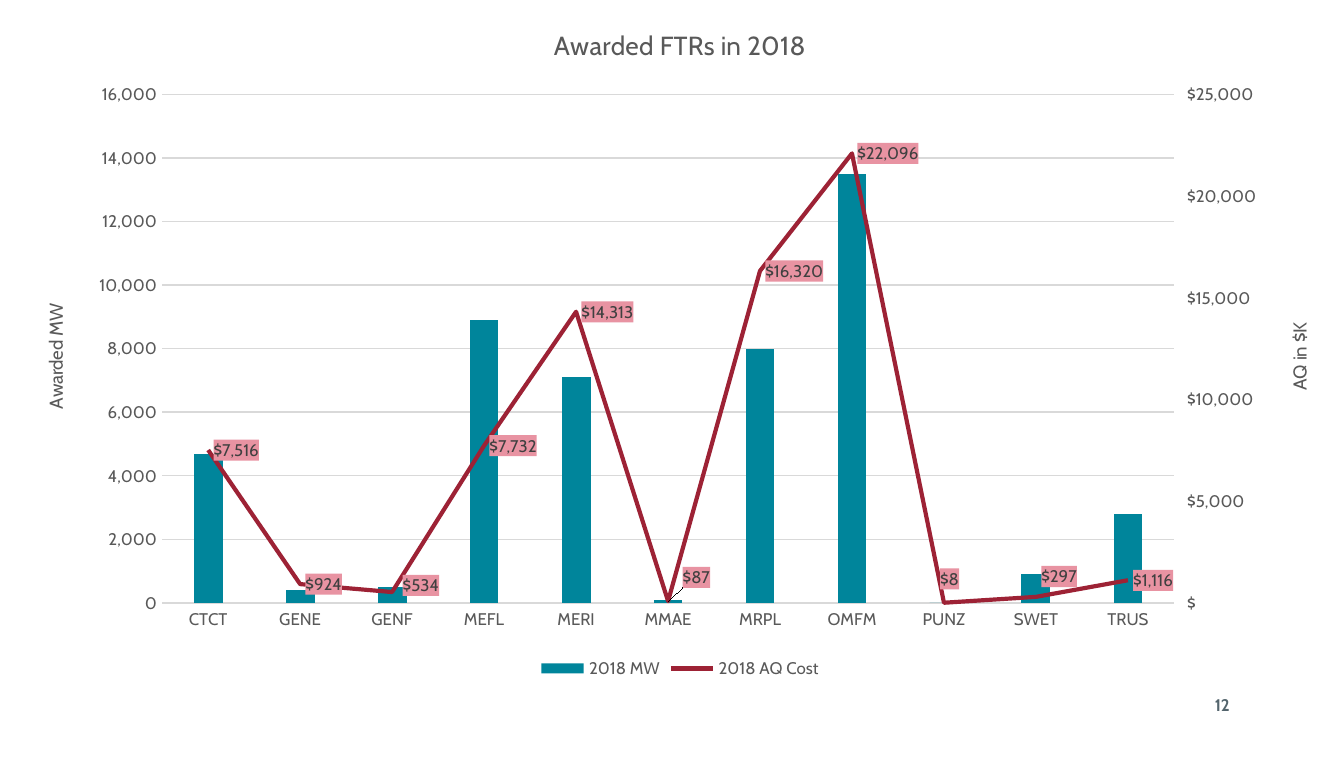
from copy import deepcopy

from pptx import Presentation
from pptx.chart.axis import CategoryAxis, ValueAxis
from pptx.chart.data import CategoryChartData
from pptx.dml.color import RGBColor
from pptx.enum.chart import XL_CHART_TYPE, XL_LABEL_POSITION, XL_LEGEND_POSITION, XL_MARKER_STYLE, XL_TICK_MARK
from pptx.enum.text import MSO_ANCHOR, PP_ALIGN
from pptx.oxml import parse_xml
from pptx.oxml.ns import nsdecls, qn
from pptx.util import Inches, Pt

TEAL = RGBColor(0x00, 0x85, 0x9B)
CRIMSON = RGBColor(0x9D, 0x22, 0x35)
PINK = RGBColor(0xE8, 0x93, 0xA2)
GREY = RGBColor(0x59, 0x59, 0x59)
DARK = RGBColor(0x40, 0x40, 0x40)
SLATE = RGBColor(0x54, 0x65, 0x6D)
PALE = RGBColor(0xD9, 0xD9, 0xD9)

HOLDERS = ["CTCT", "GENE", "GENF", "MEFL", "MERI", "MMAE", "MRPL", "OMFM", "PUNZ", "SWET", "TRUS"]
AWARDED_MW = [4700, 400, 500, 8900, 7100, 100, 8000, 13500, 0, 900, 2800]
COST_K = [7516, 924, 534, 7732, 14313, 87, 16320, 22096, 8, 297, 1116]
LABEL_SHIFTS = {2: (0.004, -0.01), 5: (0.007, -0.035), 8: (-0.007, -0.035), 9: (0, -0.03)}
THOUSANDS = '"$"#,###,'


def layout(x, y, width=None, height=None):
    """Return a manual chart layout given as shares of the chart."""
    sizes = {"x": x, "y": y, "w": width, "h": height}
    target = '<c:layoutTarget val="inner"/><c:xMode val="edge"/><c:yMode val="edge"/>' if width else ""
    parts = "".join(f'<c:{key} val="{size}"/>' for key, size in sizes.items() if size is not None)
    return parse_xml(f'<c:layout {nsdecls("c")}><c:manualLayout>{target}{parts}</c:manualLayout></c:layout>')


class SlideBuilder:
    """Hold the style and current slide."""

    font_name = "Cabin"

    def __init__(self, deck):
        self.deck = deck
        self.page = deck.slides.add_slide(deck.slide_layouts[6])

    def place(self, left, top, width, height):
        """Turn shares of the slide into lengths."""
        across, down = self.deck.slide_width, self.deck.slide_height
        return int(left * across), int(top * down), int(width * across), int(height * down)

    def style(self, font, size, color, bold=False):
        """Apply the slide's font."""
        font.name, font.size, font.bold = self.font_name, Pt(size), bold
        font.color.rgb = color

    def text(self, share, words):
        """Add a centred text box."""
        box = self.page.shapes.add_textbox(*self.place(*share))
        frame = box.text_frame
        frame.word_wrap = True
        frame.vertical_anchor = MSO_ANCHOR.MIDDLE
        frame.text = words
        para = frame.paragraphs[0]
        para.alignment = PP_ALIGN.CENTER
        self.style(para.runs[0].font, 9, SLATE, True)

    def title(self, holder, words, size):
        """Write a chart or axis title."""
        holder.text_frame.text = words
        self.style(holder.text_frame.paragraphs[0].runs[0].font, size, GREY)

    def value_axis(self, axis, words, top, step, number_format):
        """Style a value axis and its upright title."""
        axis.minimum_scale, axis.maximum_scale, axis.major_unit = 0, top, step
        axis.major_tick_mark = axis.minor_tick_mark = XL_TICK_MARK.NONE
        axis.format.line.fill.background()
        axis.tick_labels.number_format = number_format
        axis.tick_labels.number_format_is_linked = False
        self.style(axis.tick_labels.font, 9, GREY)
        self.title(axis.axis_title, words, 10)
        axis.axis_title.text_frame._element.find(qn("a:bodyPr")).set("rot", "-5400000")

    def split_line(self, chart):
        """Move the second series to a line plot on new axes and return the right axis."""
        area = chart._chartSpace.chart.plotArea
        bars = area.find(qn("c:barChart"))
        line = parse_xml(f'<c:lineChart {nsdecls("c")}><c:grouping val="standard"/><c:varyColors val="0"/>'
                         '<c:marker val="1"/><c:axId val="101"/><c:axId val="102"/></c:lineChart>')
        series = bars.findall(qn("c:ser"))[1]
        for flag in series.findall(qn("c:invertIfNegative")):
            series.remove(flag)
        line.insert(2, series)
        bars.addnext(line)
        left = area.find(qn("c:valAx"))
        copies = [deepcopy(area.find(qn("c:catAx"))), deepcopy(left)]
        for axis, number, partner in zip(copies, ("101", "102"), ("102", "101")):
            axis.find(qn("c:axId")).set("val", number)
            axis.find(qn("c:crossAx")).set("val", partner)
        below, right = copies
        right.find(qn("c:axPos")).set("val", "r")
        right.find(qn("c:crosses")).set("val", "max")
        left.addnext(right)
        right.addnext(below)
        CategoryAxis(below).visible = False
        return ValueAxis(right)

    def labels(self, series):
        """Add filled value labels, some of them shifted."""
        labels = series.data_labels
        labels.show_value = True
        labels.number_format, labels.number_format_is_linked = THOUSANDS, False
        labels.position = XL_LABEL_POSITION.RIGHT
        self.style(labels.font, 9, DARK)
        group = labels._element
        group.find(qn("c:numFmt")).addnext(parse_xml(
            f'<c:spPr {nsdecls("c", "a")}><a:solidFill><a:srgbClr val="{PINK}"/></a:solidFill></c:spPr>'))
        shared = [group.find(qn(f"c:{name}")) for name in ("numFmt", "spPr", "txPr")]
        for index, shift in LABEL_SHIFTS.items():
            series.points[index].data_label.position = XL_LABEL_POSITION.RIGHT
            label = group.xpath(f"c:dLbl[c:idx/@val={index}]")[0]
            for name in ("numFmt", "spPr", "txPr"):
                for part in label.findall(qn(f"c:{name}")):
                    label.remove(part)
            for part in reversed([layout(*shift), *map(deepcopy, shared)]):
                label.find(qn("c:idx")).addnext(part)

    def combined_chart(self, share):
        """Add the columns and the cost line."""
        data = CategoryChartData()
        data.categories = HOLDERS
        data.add_series("2018 MW", AWARDED_MW)
        data.add_series("2018 AQ Cost", [cost * 1000 for cost in COST_K])
        chart = self.page.shapes.add_chart(XL_CHART_TYPE.COLUMN_CLUSTERED, *self.place(*share), data).chart
        self.style(chart.font, 10, GREY)
        self.title(chart.chart_title, "Awarded FTRs in 2018", 14)
        chart.has_legend = True
        chart.legend.position = XL_LEGEND_POSITION.BOTTOM
        chart.legend.include_in_layout = False
        self.style(chart.legend.font, 9, GREY)

        across, up = chart.category_axis, chart.value_axis
        across.major_tick_mark = XL_TICK_MARK.NONE
        self.style(across.tick_labels.font, 9, GREY)
        up.has_major_gridlines = True
        for line in (across.format.line, up.major_gridlines.format.line):
            line.color.rgb, line.width = PALE, Pt(0.75)
        self.value_axis(up, "Awarded MW", 16000, 2000, "#,##0")
        right = self.split_line(chart)
        right.has_major_gridlines = False
        self.value_axis(right, "AQ in $K", 25000000, 5000000, THOUSANDS)
        right.major_tick_mark = XL_TICK_MARK.OUTSIDE

        columns, lines = chart.plots
        columns.gap_width = 219
        columns.vary_by_categories = False
        fill = columns.series[0].format.fill
        fill.solid()
        fill.fore_color.rgb = TEAL
        cost = lines.series[0]
        cost.smooth = False
        cost.marker.style = XL_MARKER_STYLE.NONE
        cost.format.line.color.rgb, cost.format.line.width = CRIMSON, Pt(2.25)
        self.labels(cost)
        area = chart._chartSpace.chart.plotArea
        for old in area.findall(qn("c:layout")):
            area.remove(old)
        area.insert(0, layout(0.11, 0.136, 0.762, 0.745))


def main():
    """Build and save the slide."""
    deck = Presentation()
    deck.slide_width, deck.slide_height = Inches(10), Inches(5.63)
    builder = SlideBuilder(deck)
    builder.text((0.886, 0.904, 0.047, 0.053), "12")
    builder.combined_chart((0.012, 0.002, 0.988, 0.902))
    deck.save("out.pptx")


if __name__ == "__main__":
    main()
